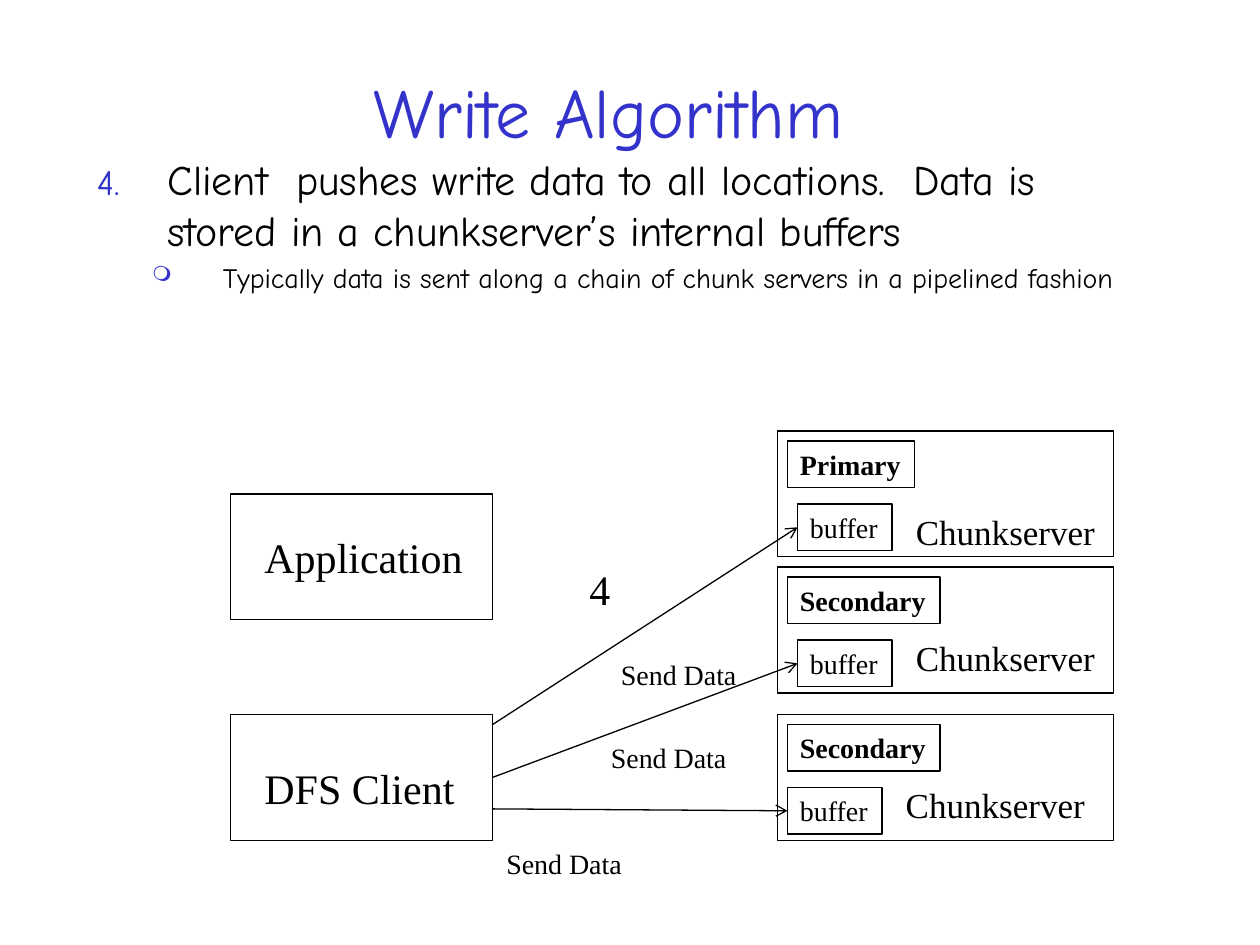
from dataclasses import dataclass

from lxml.etree import SubElement
from pptx import Presentation
from pptx.dml.color import RGBColor as RGB
from pptx.enum.shapes import MSO_CONNECTOR as CONN, MSO_SHAPE as SHAPE
from pptx.enum.text import MSO_ANCHOR as ANCHOR, MSO_AUTO_SIZE as FIT, PP_ALIGN as ALIGN
from pptx.oxml.ns import qn
from pptx.util import Inches, Pt


@dataclass(frozen=True)
class Theme:
    accent: str = "3333CC"
    ink: str = "000000"
    heading_font: str = "Comic Neue"
    diagram_font: str = "Times New Roman"
    title: int = 40
    large: int = 24
    medium: int = 20
    small: int = 16
    line: float = 0.75


class Builder:
    def __init__(self, slide, theme):
        self.slide = slide
        self.theme = theme

    def style(self, p, size, font, color, bold=False):
        for r in p.runs:
            r.font.size = Pt(size)
            r.font.name = font
            r.font.bold = bold
            r.font.color.rgb = RGB.from_string(color)

    def textbox(self, x, y, w, h):
        sp = self.slide.shapes.add_textbox(Inches(x), Inches(y), Inches(w), Inches(h))
        sp.text_frame.word_wrap = True
        return sp.text_frame

    def title(self, text, x, y, w, h):
        tf = self.textbox(x, y, w, h)
        tf.text = text
        tf.vertical_anchor = ANCHOR.MIDDLE
        p = tf.paragraphs[0]
        p.alignment = ALIGN.CENTER
        self.style(p, self.theme.title, self.theme.heading_font, self.theme.accent)

    def bullets(self, items, x, y, w, h):
        tf = self.textbox(x, y, w, h)
        tf.text = "\n".join(text for text, *_ in items)
        for p, (_, level, size, margin, scale, tag, marker) in zip(tf.paragraphs, items):
            p.level = level
            self.style(p, size, self.theme.heading_font, self.theme.ink)
            pPr = p._p.get_or_add_pPr()
            pPr.set("marL", str(Inches(margin)))
            pPr.set("indent", str(Inches(-0.56)))
            before = SubElement(pPr, qn("a:spcBef"))
            SubElement(before, qn("a:spcPct"), val="20000")
            color = SubElement(pPr, qn("a:buClr"))
            SubElement(color, qn("a:srgbClr"), val=self.theme.accent)
            SubElement(pPr, qn("a:buSzPct"), val=str(scale * 1000))
            SubElement(pPr, qn(tag), **marker)

    def label(self, text, x, y, w, h, size, wrap=False):
        tf = self.textbox(x, y, w, h)
        tf.text = text
        tf.word_wrap = wrap
        tf.auto_size = FIT.SHAPE_TO_FIT_TEXT
        self.style(tf.paragraphs[0], size, self.theme.diagram_font, self.theme.ink)

    def box(self, x, y, w, h, text="", bold=False):
        sp = self.slide.shapes.add_shape(
            SHAPE.RECTANGLE, Inches(x), Inches(y), Inches(w), Inches(h))
        sp.shadow.inherit = False
        sp.fill.background()
        sp.line.color.rgb = RGB.from_string(self.theme.ink)
        sp.line.width = Pt(self.theme.line)
        if text:
            tf = sp.text_frame
            tf.text = text
            tf.word_wrap = False
            tf.auto_size = FIT.SHAPE_TO_FIT_TEXT
            tf.vertical_anchor = ANCHOR.TOP
            p = tf.paragraphs[0]
            p.alignment = ALIGN.LEFT
            self.style(p, self.theme.small, self.theme.diagram_font, self.theme.ink, bold)
        return sp

    def arrow(self, source, start_y, target):
        cx = self.slide.shapes.add_connector(
            CONN.STRAIGHT, source.left + source.width, Inches(start_y),
            target.left, target.top + target.height // 2)
        if start_y == CLIENT_MIDDLE:
            cx.begin_connect(source, 3)
        cx.end_connect(target, 1)
        cx.line.color.rgb = RGB.from_string(self.theme.ink)
        cx.line.width = Pt(self.theme.line)
        SubElement(cx.line._get_or_add_ln(), qn("a:tailEnd"), type="arrow")
        SubElement(cx._element.spPr, qn("a:effectLst"))

    def server(self, top, role, role_w, buffer_x, name_dy):
        self.box(6.17, top, 2.67, 1)
        self.box(6.25, top + 0.08, role_w, 0.37, role, bold=True)
        self.label("Chunkserver", buffer_x + 0.84, top + name_dy, 1.63, 0.44,
                   self.theme.medium)
        return self.box(buffer_x, top + 0.58, 0.75, 0.37, "buffer")


CLIENT_MIDDLE = 6.17
SERVERS = [
    (3.42, "Primary", 1.01, 6.33, 0.58),
    (4.5, "Secondary", 1.21, 6.33, 0.5),
    (5.67, "Secondary", 1.21, 6.25, 0.5),
]
ARROW_STARTS = [5.75, CLIENT_MIDDLE, 6.42]
SEND_LABELS = [(4.83, 5.17, 1.17), (4.75, 5.83, 1.17), (3.92, 6.67, 1.33)]


def main():
    prs = Presentation()
    prs.slide_width, prs.slide_height = Inches(10), Inches(7.5)
    theme = Theme()
    b = Builder(prs.slides.add_slide(prs.slide_layouts[6]), theme)

    b.title("Write Algorithm", 0.58, 0.25, 8.5, 1.25)
    b.bullets([
        ("Client  pushes write data to all locations.  Data is stored in a "
         "chunkserver’s internal buffers",
         0, theme.large, 0.56, 85, "a:buAutoNum", {"type": "arabicPeriod", "startAt": "4"}),
        ("Typically data is sent along a chain of chunk servers in a pipelined fashion",
         1, theme.small, 1, 75, "a:buChar", {"char": "❍"}),
    ], 0.67, 1.17, 8.5, 1.92)

    b.box(1.83, 3.92, 2.08, 1)
    client = b.box(1.83, 5.67, 2.08, 1)
    b.label("Application", 2, 4.17, 1.79, 0.5, theme.large)
    b.label("DFS Client", 2, 6, 1.73, 0.5, theme.large)
    b.label("4", 4.58, 4.42, 0.37, 0.5, theme.large)

    buffers = [b.server(*row) for row in SERVERS]
    for start_y, target in zip(ARROW_STARTS, buffers):
        b.arrow(client, start_y, target)
    for x, y, w in SEND_LABELS:
        b.label("Send Data", x, y, w, 0.37, theme.small, wrap=True)

    prs.save("out.pptx")


if __name__ == "__main__":
    main()
